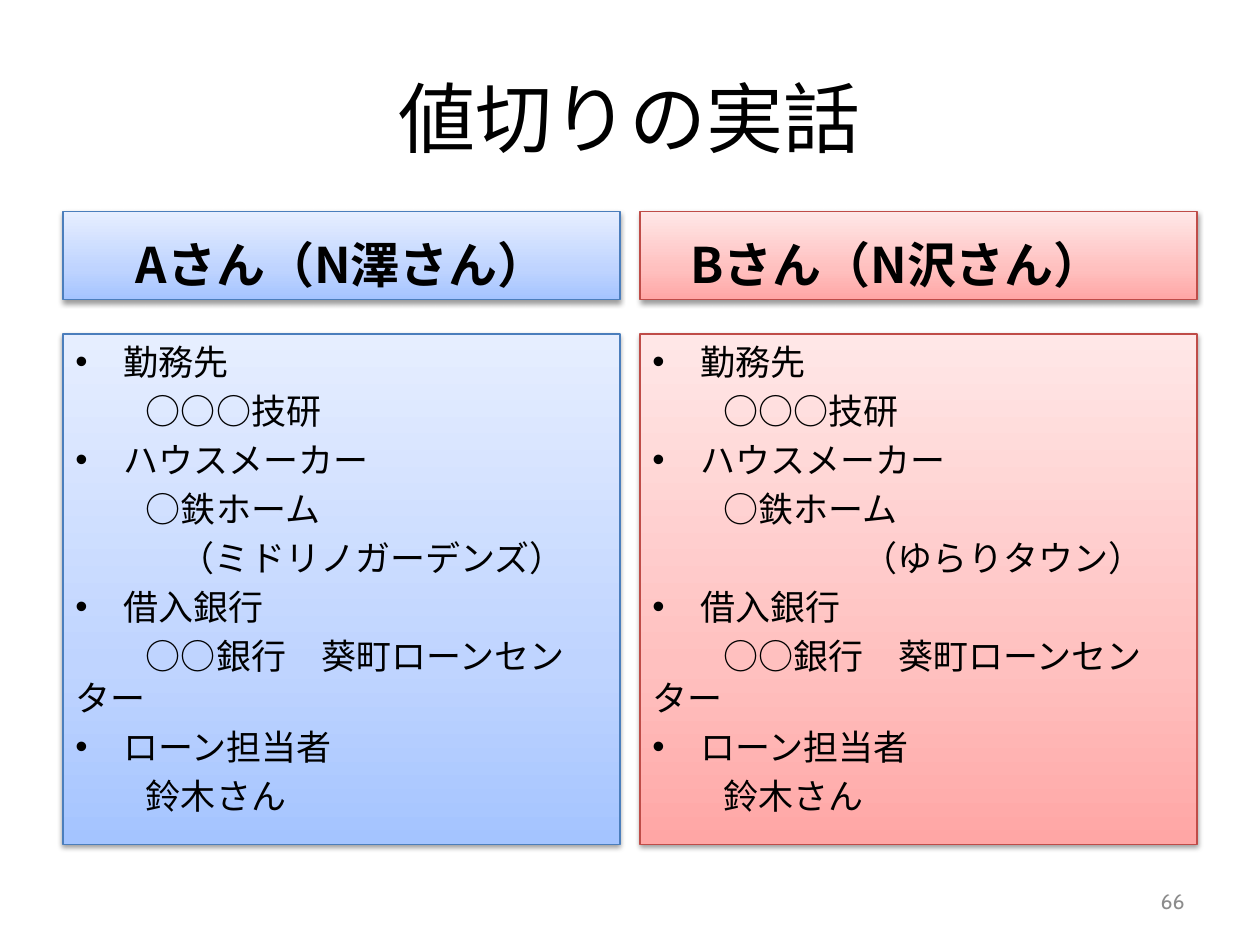
from lxml import etree
from pptx import Presentation
from pptx.dml.color import RGBColor
from pptx.enum import shapes, text
from pptx.oxml import ns
from pptx.util import Inches, Pt

FONT = "Noto Sans CJK JP"
BLACK = RGBColor(0, 0, 0)
GRAY = RGBColor(0x8C, 0x8C, 0x8C)
BLUE = {
    "line": RGBColor(0x4B, 0x7E, 0xBC),
    "stops": [RGBColor(0xA4, 0xC4, 0xFF), RGBColor(0xBF, 0xD4, 0xFF),
              RGBColor(0xE6, 0xEE, 0xFF)],
}
RED = {
    "line": RGBColor(0xBF, 0x4C, 0x48),
    "stops": [RGBColor(0xFF, 0xA6, 0xA5), RGBColor(0xFF, 0xC0, 0xBF),
              RGBColor(0xFF, 0xE7, 0xE7)],
}
STEPS = (0, 35, 100)
LEFT, TOP = Inches(0.5), Inches(1.68)
WIDTH, HEIGHT, GAP = Inches(4.42), Inches(5.02), Inches(0.16)
HEAD, BODY = Inches(0.7), Inches(0.97)
HANG = Inches(0.38)


def node(up, tag, **vals):
    return etree.SubElement(up, ns.qn(tag), {k: str(v) for k, v in vals.items()})


def style(run, **look):
    look = {"name": FONT, "size": Pt(20), "bold": False, **look}
    color = look.pop("color", BLACK)
    for key, val in look.items():
        setattr(run.font, key, val)
    run.font.color.rgb = color
    node(run.font._element, "a:ea", typeface=look["name"])


def write(para, words, look, **form):
    for key, val in form.items():
        setattr(para, key, val)
    run = para.add_run()
    run.text = words
    style(run, **look)


def indent(para, first, margin=0):
    props = para._p.get_or_add_pPr()
    props.set("marL", str(margin))
    props.set("indent", str(first))
    return props


def panel(slide, box, tone, anchor):
    """Add a shaded rectangle with a soft shadow; return its text frame."""
    shape = slide.shapes.add_shape(shapes.MSO_SHAPE.RECTANGLE, *box)
    shape.line.color.rgb = tone["line"]
    shape.line.width = Pt(0.75)
    shape.fill.gradient()
    shape.fill.gradient_angle = 90
    props = shape._element.spPr
    stops = props.find(ns.qn("a:gradFill")).find(ns.qn("a:gsLst"))
    for stop in list(stops):
        stops.remove(stop)
    for step, color in zip(STEPS, tone["stops"]):
        stop = node(stops, "a:gs", pos=step * 1000)
        node(stop, "a:srgbClr", val=color)
    effects = node(props, "a:effectLst")
    shade = node(effects, "a:outerShdw", blurRad=Pt(3.1), dist=Pt(1.6),
                 dir=90 * 60000, rotWithShape=0)
    node(node(shade, "a:srgbClr", val=BLACK), "a:alpha", val=38000)
    frame = shape.text_frame
    frame.word_wrap = True
    frame.vertical_anchor = anchor
    return frame


def column(slide, box, tone, name, shift, town, inset):
    """Add one person's heading and the list of details below it."""
    left, top, width, height = box
    frame = panel(slide, (left, top, width, HEAD), tone, text.MSO_ANCHOR.BOTTOM)
    para = frame.paragraphs[0]
    write(para, name, {"size": Pt(28), "bold": True},
          alignment=text.PP_ALIGN.LEFT)
    indent(para, shift)

    frame = panel(slide, (left, top + BODY, width, height - BODY), tone,
                  text.MSO_ANCHOR.TOP)
    deep = Inches(0.56)
    rows = [
        ("勤務先", None), ("○○○技研", deep),
        ("ハウスメーカー", None), ("○鉄ホーム", deep), (town, inset),
        ("借入銀行", None), ("○○銀行　葵町ローンセンター", deep),
        ("ローン担当者", None), ("鈴木さん", deep),
    ]
    for spot, (words, first) in enumerate(rows):
        para = frame.add_paragraph() if spot else frame.paragraphs[0]
        write(para, words, {}, alignment=text.PP_ALIGN.LEFT,
              space_before=Pt(4), line_spacing=Pt(24))
        if first is None:
            props = indent(para, -HANG, HANG)
            node(props, "a:buFont", typeface="Arial")
            node(props, "a:buChar", char="•")
        else:
            indent(para, first)


def title(slide, box, words):
    shape = slide.shapes.title
    for key, val in zip(("left", "top", "width", "height"), box):
        setattr(shape, key, val)
    shape.text_frame.vertical_anchor = text.MSO_ANCHOR.MIDDLE
    write(shape.text_frame.paragraphs[0], words, {"size": Pt(44)},
          alignment=text.PP_ALIGN.CENTER)


def number(slide, box, words):
    frame = slide.shapes.add_textbox(*box).text_frame
    frame.word_wrap = True
    frame.vertical_anchor = text.MSO_ANCHOR.MIDDLE
    write(frame.paragraphs[0], words,
          {"name": "Cabin", "size": Pt(12), "color": GRAY},
          alignment=text.PP_ALIGN.RIGHT)


def main():
    deck = Presentation()
    deck.slide_width, deck.slide_height = Inches(10), Inches(7.5)
    slide = deck.slides.add_slide(deck.slide_layouts[5])
    title(slide, (LEFT, Inches(0.3), Inches(9), Inches(1.25)), "値切りの実話")
    people = [
        (BLUE, "Aさん（N澤さん）", Inches(0.48),
         "（ミドリノガーデンズ）", Inches(0.83)),
        (RED, "Bさん（N沢さん）", Inches(0.3),
         "（ゆらりタウン）", Inches(1.67)),
    ]
    for spot, person in enumerate(people):
        left = LEFT + spot * (WIDTH + GAP)
        column(slide, (left, TOP, WIDTH, HEIGHT), *person)
    number(slide, (Inches(7.17), Inches(6.95), Inches(2.33), Inches(0.4)), "66")
    deck.save("out.pptx")


if __name__ == "__main__":
    main()
